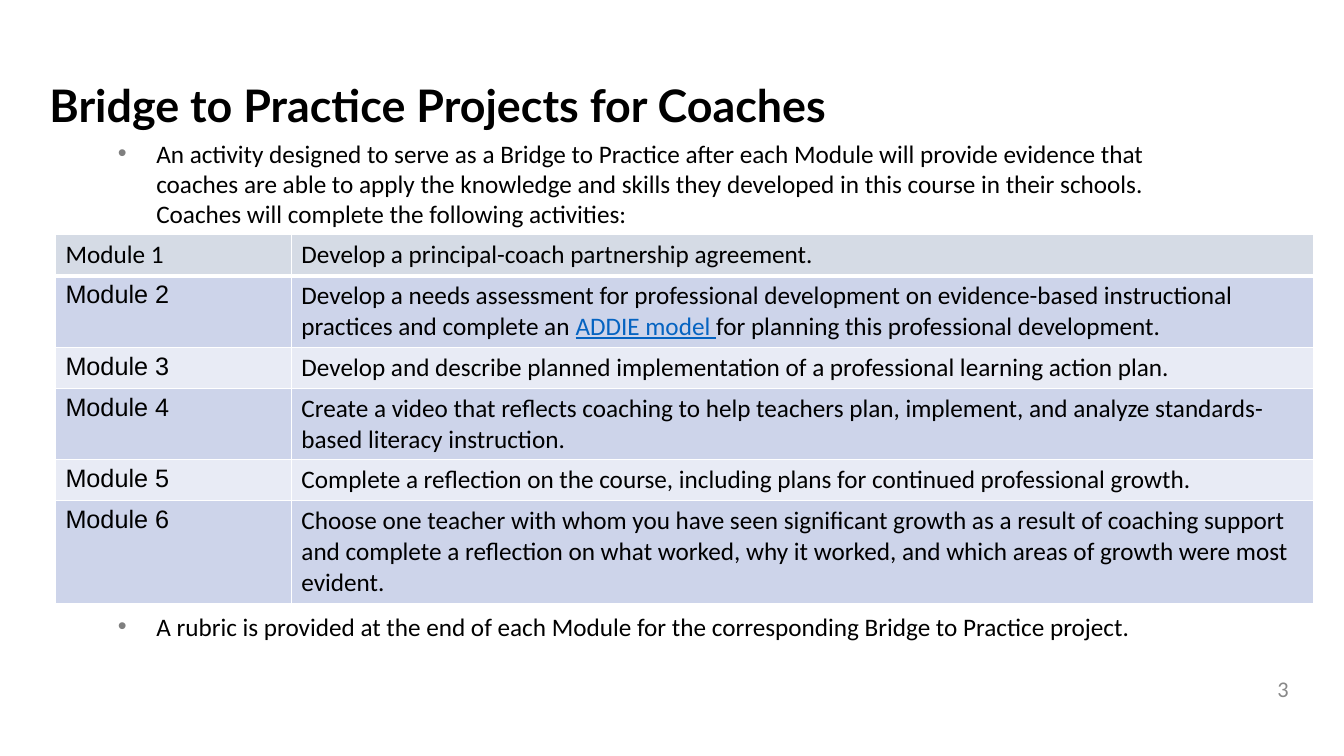
from pptx import Presentation
from pptx.dml.color import RGBColor
from pptx.enum.text import MSO_ANCHOR as Anchor, MSO_AUTO_SIZE as Auto, PP_ALIGN as Align
from pptx.oxml import parse_xml
from pptx.oxml.ns import nsdecls
from pptx.util import Inches, Pt

BLACK = RGBColor(0x00, 0x00, 0x00)
GRAY = RGBColor(0x88, 0x88, 0x88)
LINK = RGBColor(0x05, 0x63, 0xC1)
HEAD = RGBColor(0xD5, 0xDB, 0xE5)
DARK = RGBColor(0xCD, 0xD4, 0xEA)
PALE = RGBColor(0xE8, 0xEB, 0xF5)


def style(para, size, face="Calibri", color=BLACK, bold=False):
    for run in para.runs:
        font = run.font
        font.size, font.name, font.bold = Pt(size), face, bold
        font.color.rgb = color


def place(shape, left, top, width, height):
    shape.left, shape.top = Inches(left), Inches(top)
    shape.width, shape.height = Inches(width), Inches(height)
    shape.text_frame.word_wrap = True
    shape.text_frame.auto_size = Auto.NONE


prs = Presentation()
prs.slide_width, prs.slide_height = Inches(13.33), Inches(7.5)
slide = prs.slides.add_slide(prs.slide_layouts[1])

# Title
title = slide.shapes.title
place(title, 0.39, 0.57, 9.07, 0.94)
title.text_frame.text = "Bridge to Practice Projects for Coaches"
title.text_frame.vertical_anchor = Anchor.MIDDLE
title.text_frame.paragraphs[0].alignment = Align.LEFT
style(title.text_frame.paragraphs[0], 32, "Lato", bold=True)

# Bullets above and below the table
body = slide.placeholders[1]
place(body, 1.07, 1.32, 10.65, 5.2)
points = [
    ("An activity designed to serve as a Bridge to Practice after each Module will provide "
     "evidence that coaches are able to apply the knowledge and skills they developed in this "
     "course in their schools. Coaches will complete the following activities:", 0),
    ("A rubric is provided at the end of each Module for the corresponding "
     "Bridge to Practice project.", 273),
]
frame = body.text_frame
frame.text = "\n".join(text for text, gap in points)
for para, (text, gap) in zip(frame.paragraphs, points):
    para.space_before = Pt(gap)
    props = para._p.get_or_add_pPr()
    props.set("marL", str(Inches(0.38)))
    props.set("indent", str(-Inches(0.38)))
    for xml in ('<a:buClr {}><a:srgbClr val="7F7F7F"/></a:buClr>',
                '<a:buFont {} typeface="Arial"/>', '<a:buChar {} char="•"/>'):
        props.append(parse_xml(xml.format(nsdecls("a"))))
    style(para, 18)

# Module table: text parts and number of lines in each row
rows = [
    (["Develop a principal-coach partnership agreement."], 1),
    (["Develop a needs assessment for professional development on evidence-based "
      "instructional practices and complete an ", "ADDIE model ",
      "for planning this professional development."], 2),
    (["Develop and describe planned implementation of a professional learning "
      "action plan."], 1),
    (["Create a video that reflects coaching to help teachers plan, implement, and "
      "analyze standards-based literacy instruction."], 2),
    (["Complete a reflection on the course, including plans for continued "
      "professional growth."], 1),
    (["Choose one teacher with whom you have seen significant growth as a result of "
      "coaching support and complete a reflection on what worked, why it worked, and "
      "which areas of growth were most evident."], 3),
]
table = slide.shapes.add_table(len(rows), 2, Inches(0.55), Inches(2.33),
                               Inches(12.48), Inches(3.65)).table
table.first_row = table.horz_banding = False
table.columns[0].width, table.columns[1].width = Inches(2.34), Inches(10.14)

for i, (parts, lines) in enumerate(rows):
    table.rows[i].height = Inches(0.1 + 0.3 * lines)
    label, task = table.cell(i, 0), table.cell(i, 1)
    label.text_frame.text = f"Module {i + 1}"
    para = task.text_frame.paragraphs[0]
    for part in parts:
        para.add_run().text = part
    style(label.text_frame.paragraphs[0], 18, "Arial" if i else "Calibri")
    style(para, 18)
    if len(parts) > 1:
        para.runs[1].font.color.rgb = LINK
        para.runs[1].font.underline = True
    for cell in (label, task):
        # White borders, thicker around the first row's lower edge
        props = cell._tc.get_or_add_tcPr()
        for side in "LRTB":
            thick = (i == 0 and side == "B") or (i == 1 and side == "T")
            props.append(parse_xml(
                f'<a:ln{side} {nsdecls("a")} w="{Pt(3 if thick else 1)}"><a:solidFill>'
                f'<a:srgbClr val="FFFFFF"/></a:solidFill></a:ln{side}>'))
        cell.fill.solid()
        cell.fill.fore_color.rgb = HEAD if i == 0 else DARK if i % 2 else PALE

# Slide number
num = slide.shapes.add_textbox(0, 0, 0, 0)
place(num, 10.55, 6.68, 2.33, 0.3)
num.text_frame.text = "3"
num.text_frame.vertical_anchor = Anchor.MIDDLE
num.text_frame.paragraphs[0].alignment = Align.RIGHT
style(num.text_frame.paragraphs[0], 16, color=GRAY)

prs.save("out.pptx")
